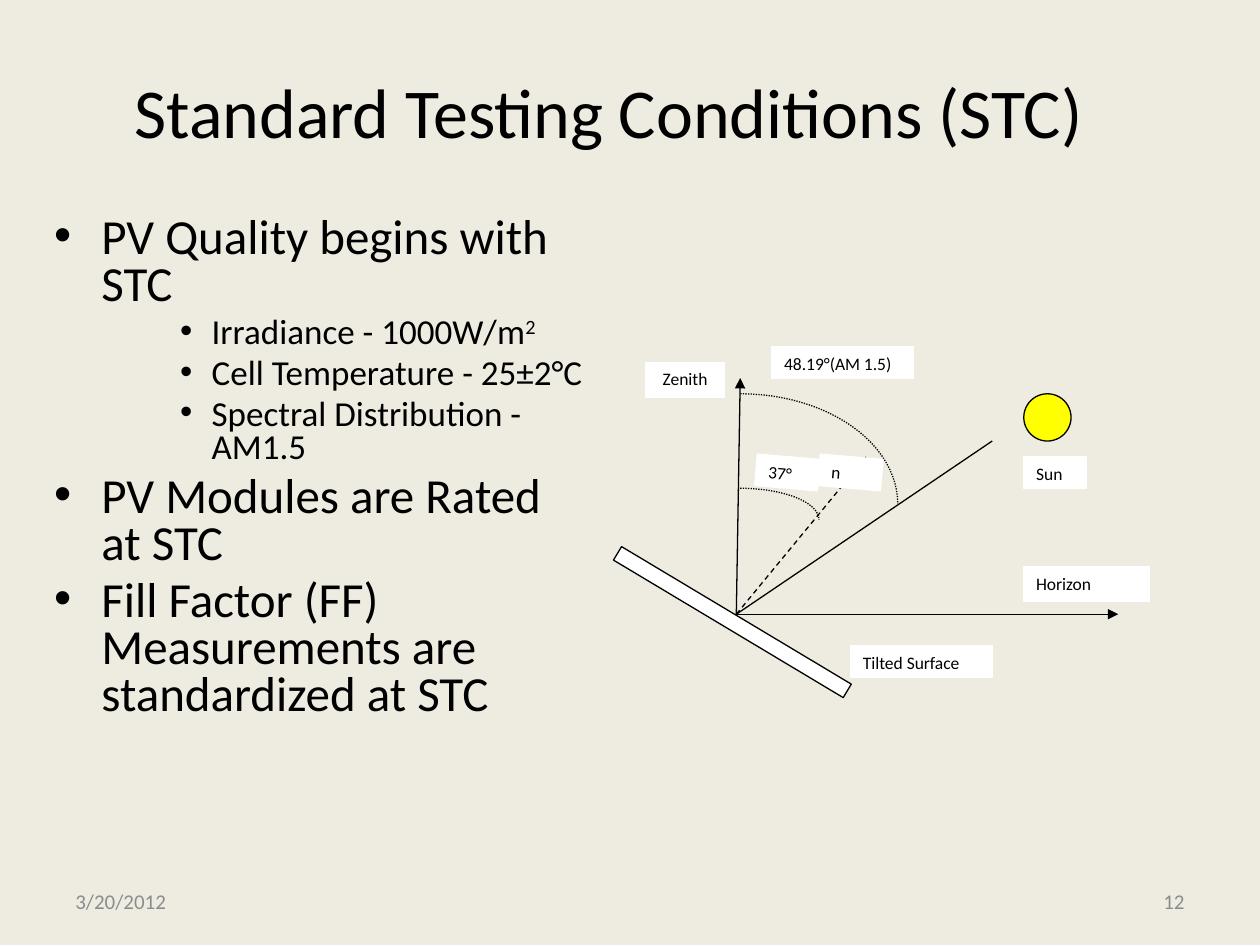
"""Build the Standard Testing Conditions slide with its sun-angle diagram."""
import math

from lxml import etree
from pptx import Presentation
from pptx import util as u
from pptx.dml.color import RGBColor
from pptx.enum import dml, shapes, text
from pptx.oxml.ns import qn

BLACK = RGBColor(0, 0, 0)
WHITE = RGBColor(255, 255, 255)
YELLOW = RGBColor(255, 255, 0)
GREY = RGBColor(0x8C, 0x8C, 0x8C)
CREAM = RGBColor(0xEE, 0xEC, 0xE1)
FONT = "Calibri"
LEFT, CENTER, RIGHT = text.PP_ALIGN.LEFT, text.PP_ALIGN.CENTER, text.PP_ALIGN.RIGHT
DASH = dml.MSO_LINE.DASH
DOT = dml.MSO_LINE.ROUND_DOT

TITLE = "Standard Testing Conditions (STC)"
BULLETS = [
    (0, "PV Quality begins with STC", ""),
    (2, "Irradiance - 1000W/m", "2"),
    (2, "Cell Temperature - 25±2°C", ""),
    (2, "Spectral Distribution - AM1.5", ""),
    (0, "PV Modules are Rated at STC", ""),
    (0, "Fill Factor (FF) Measurements are standardized at STC", ""),
]
SIZES = {0: 28, 2: 20}
FOOTERS = [("3/20/2012", 0.5, LEFT), ("12", 7.17, RIGHT)]

# Diagram grid: column, row, columns wide, rows high
ORIGIN, CELL = (4.75, 2.75), 0.125
VERTEX = (8.75, 17)
PANEL, PANEL_TILT = (0, 17, 17, 1), 30.9
SUN = (27, 3, 3, 3)
RAYS = [((9, 2), None, True), ((33, 17), None, True),
        ((25, 6), None, False), ((17, 7), DASH, False)]
ARCS = [(9, 9, 5, 2), (9, 3, 10, 7)]
LABELS = [
    ("37°", (10, 7, 4, 2), 4.9, LEFT),
    ("n", (14, 7, 4, 2), 4.9, LEFT),
    ("48.19°(AM 1.5)", (11, 0, 9, 2), 0, LEFT),
    ("Horizon", (27, 14, 8, 2.2), 0, LEFT),
    ("Zenith", (3, 1, 5, 2.2), 0, CENTER),
    ("Sun", (27, 7, 4, 2), 0, LEFT),
    ("Tilted Surface", (16, 19, 9, 2), 0, LEFT),
]


def write(p, content, size=10, color=BLACK, align=None, raised=False):
    if align is not None:
        p.alignment = align
    r = p.add_run()
    r.text = content
    r.font.name, r.font.size = FONT, u.Pt(size)
    r.font.color.rgb = color
    if raised:
        r._r.get_or_add_rPr().set("baseline", "30000")


def place(sp, *box):
    sp.left, sp.top, sp.width, sp.height = map(u.Inches, box)


def point(col, row):
    return u.Inches(ORIGIN[0] + col * CELL), u.Inches(ORIGIN[1] + row * CELL)


def outline(sp, color=BLACK, dash=None):
    sp.line.color.rgb, sp.line.width = color, u.Pt(0.75)
    if dash is not None:
        sp.line.dash_style = dash


def add_block(group, kind, box, fill=WHITE, line=BLACK, tilt=0):
    col, row, wide, high = box
    sp = group.shapes.add_shape(kind, *point(col, row),
                                u.Inches(wide * CELL), u.Inches(high * CELL))
    sp.shadow.inherit = False
    sp.fill.solid()
    sp.fill.fore_color.rgb = fill
    outline(sp, line)
    sp.rotation = tilt
    return sp


def add_ray(group, end, dash, arrow):
    line = group.shapes.add_connector(shapes.MSO_CONNECTOR.STRAIGHT,
                                      *point(*VERTEX), *point(*end))
    outline(line, dash=dash)
    if arrow:
        etree.SubElement(line.line._get_or_add_ln(), qn("a:tailEnd"), type="triangle")
    etree.SubElement(line._element.spPr, qn("a:effectLst"))


def add_arc(group, col, row, rx, ry, steps=24):
    angles = [math.pi / 2 * i / steps for i in range(steps + 1)]
    points = [point(col + rx * math.sin(a), row + ry * (1 - math.cos(a))) for a in angles]
    builder = group.shapes.build_freeform(*points[0])
    builder.add_line_segments(points[1:], close=False)
    sp = builder.convert_to_shape()
    sp.shadow.inherit = False
    sp.fill.background()
    outline(sp, dash=DOT)


def add_text(s):
    title, body = s.placeholders
    place(title, 0.58, 0.25, 8.5, 1.25)
    write(title.text_frame.paragraphs[0], TITLE, size=40, align=CENTER)
    place(body, 0.33, 1.67, 4.42, 4.5)
    tf = body.text_frame
    tf.auto_size = text.MSO_AUTO_SIZE.NONE
    for i, (level, content, power) in enumerate(BULLETS):
        p = tf.add_paragraph() if i else tf.paragraphs[0]
        p.level, p.line_spacing = level, 0.8
        if not i:
            p.space_before = u.Pt(0)
        write(p, content, size=SIZES[level])
        if power:
            write(p, power, size=SIZES[level], raised=True)
    for content, left, align in FOOTERS:
        sp = s.shapes.add_textbox(0, 0, 0, 0)
        place(sp, left, 6.95, 2.33, 0.4)
        tf = sp.text_frame
        tf.word_wrap, tf.vertical_anchor = True, text.MSO_ANCHOR.MIDDLE
        write(tf.paragraphs[0], content, size=12, color=GREY, align=align)


def add_diagram(s):
    group = s.shapes.add_group_shape()
    add_block(group, shapes.MSO_SHAPE.RECTANGLE, PANEL, tilt=PANEL_TILT)
    for ray in RAYS:
        add_ray(group, *ray)
    add_block(group, shapes.MSO_SHAPE.OVAL, SUN, fill=YELLOW)
    for arc in ARCS:
        add_arc(group, *arc)
    for content, box, tilt, align in LABELS:
        sp = add_block(group, shapes.MSO_SHAPE.RECTANGLE, box, line=WHITE, tilt=tilt)
        tf = sp.text_frame
        tf.word_wrap, tf.vertical_anchor = True, text.MSO_ANCHOR.TOP
        write(tf.paragraphs[0], content, align=align)


def main():
    prs = Presentation()
    prs.slide_width, prs.slide_height = u.Inches(10), u.Inches(7.5)
    s = prs.slides.add_slide(prs.slide_layouts[1])
    s.background.fill.solid()
    s.background.fill.fore_color.rgb = CREAM
    add_text(s)
    add_diagram(s)
    prs.save("out.pptx")


if __name__ == "__main__":
    main()
